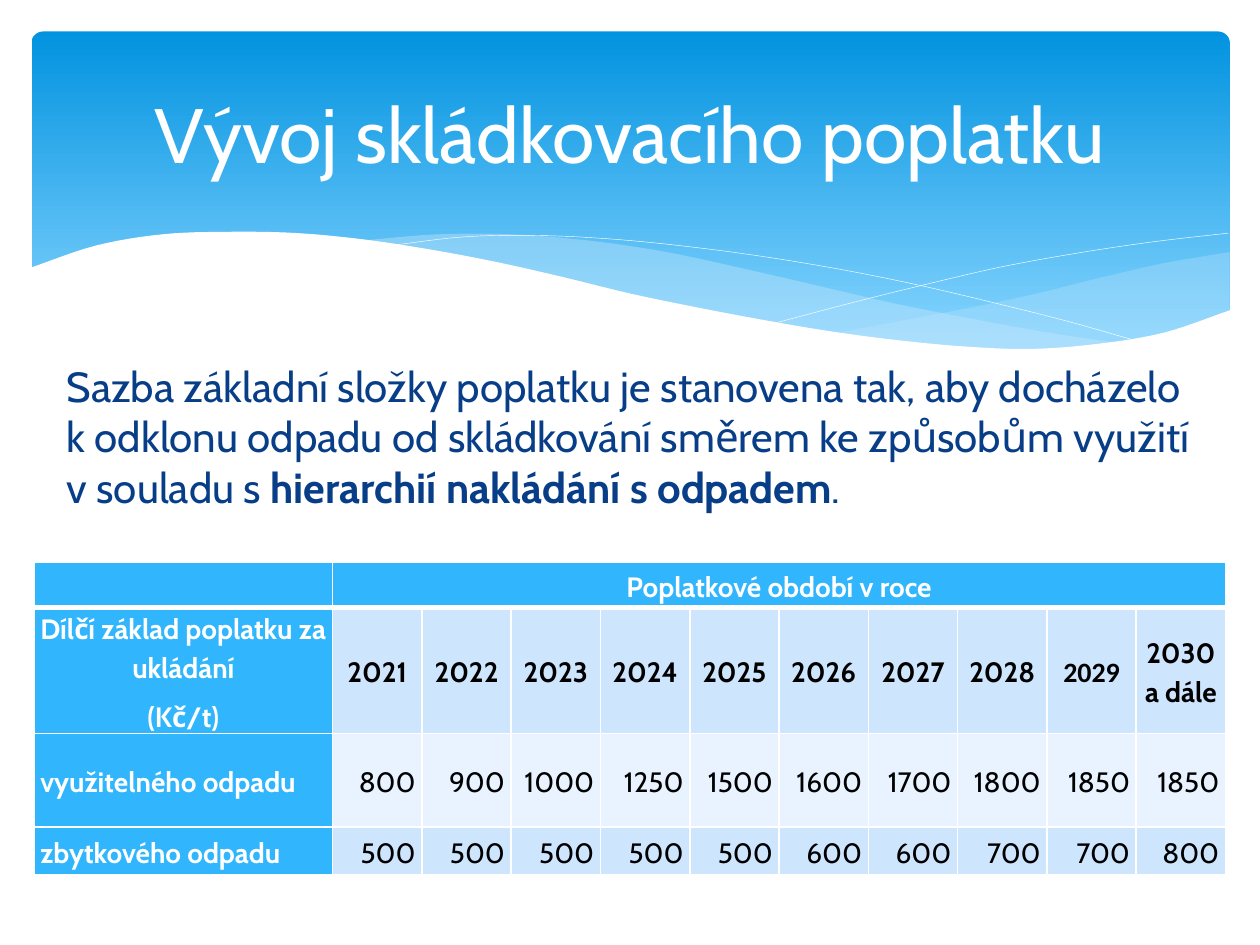
from lxml import etree
from pptx import Presentation
from pptx.dml.color import RGBColor
from pptx.enum.shapes import MSO_SHAPE
from pptx.enum.text import MSO_ANCHOR, PP_ALIGN
from pptx.oxml.ns import qn
from pptx.util import Inches, Pt

ROUNDED = MSO_SHAPE.ROUNDED_RECTANGLE
TOP, MIDDLE = MSO_ANCHOR.TOP, MSO_ANCHOR.MIDDLE
LEFT, CENTER, RIGHT, JUSTIFY = PP_ALIGN.LEFT, PP_ALIGN.CENTER, PP_ALIGN.RIGHT, PP_ALIGN.JUSTIFY

WHITE, BLACK, NAVY = "FFFFFF", "000000", "073E87"
BLUE, BAND, PALE, MIST = "31B6FD", "CEE5FE", "E8F3FF", "C6E7FC"
FONT, YEAR_FONT = "Cabin", {"2029": "Calibri"}

TITLE = "Vývoj skládkovacího poplatku"
BODY = [
    ("Sazba základní složky poplatku je stanovena tak, aby docházelo k odklonu odpadu "
     "od skládkování směrem ke způsobům využití v souladu s ", False),
    ("hierarchií nakládání s odpadem", True),
    (".", False),
]
PERIOD = "Poplatkové období v roce"
YEARS_LABEL = "Dílčí základ poplatku za ukládání\n(Kč/t)"
YEARS = [str(year) for year in range(2021, 2030)] + ["2030 a dále"]
FEES = [
    ("využitelného odpadu", [800, 900, 1000, 1250, 1500, 1600, 1700, 1800, 1850, 1850], PALE),
    ("zbytkového odpadu", [500, 500, 500, 500, 500, 600, 600, 700, 700, 800], BAND),
]
ROW_HEIGHTS = [0.36, 0.88, 0.74, 0.38]
LABEL_WIDTH, TABLE_WIDTH = 2.37, 9.46

BANDS = [
    {"span": (6.61, 9.76), "color": MIST, "opacity": 29,
     "upper": [2.65, 2.55, 2.45, 2.34, 2.21, 2.09, 2],
     "lower": [2.65, 2.71, 2.76, 2.78, 2.74, 2.65, 2.47]},
    {"span": (2.86, 8.93), "color": MIST, "opacity": 40,
     "upper": [1.91, 1.86, 1.86, 1.91, 2, 2.13, 2.27, 2.41, 2.53, 2.64, 2.73],
     "lower": [1.91, 2, 2.12, 2.26, 2.4, 2.53, 2.64, 2.72, 2.77, 2.78, 2.73]},
]
HAIRLINES = [
    {"span": (3.09, 9.07),
     "heights": [1.95, 1.88, 1.87, 1.9, 1.96, 2.04, 2.14, 2.26, 2.4, 2.55, 2.72]},
    {"span": (6.13, 9.75), "heights": [2.57, 2.41, 2.26, 2.12, 2.01, 1.92, 1.85]},
]
FOREGROUND = {
    "span": (0.23, 9.77), "color": WHITE, "opacity": 100,
    "upper": [2.13, 1.95, 1.86, 1.84, 1.85, 1.9, 1.98, 2.08, 2.2, 2.33,
              2.44, 2.54, 2.63, 2.7, 2.75, 2.77, 2.73, 2.64, 2.46],
    "lower": [3.29, 3.29],
}
STEPS_PER_KNOT = 6


def rgb(value):
    return RGBColor.from_string(value)


def style(font, size, color, bold=False, name=FONT):
    font.name, font.size, font.bold = name, Pt(size), bold
    font.color.rgb = rgb(color)


def catmull_rom(a, b, c, d, t):
    return b + t / 2 * (c - a + t * (2 * a - 5 * b + 4 * c - d + t * (3 * (b - c) + d - a)))


def smooth_curve(span, heights):
    start, end = span
    knots = len(heights) - 1
    padded = [2 * heights[0] - heights[1], *heights, 2 * heights[-1] - heights[-2]]
    points = []
    for step in range(knots * STEPS_PER_KNOT + 1):
        knot = min(step // STEPS_PER_KNOT, knots - 1)
        t = step / STEPS_PER_KNOT - knot
        x = start + (end - start) * (knot + t) / knots
        points.append((Inches(x), Inches(catmull_rom(*padded[knot:knot + 4], t))))
    return points


def add_freeform(slide, points, close):
    builder = slide.shapes.build_freeform(*points[0])
    builder.add_line_segments(points[1:], close=close)
    sp = builder.convert_to_shape()
    sp.shadow.inherit = False
    return sp


def add_band(slide, span, upper, lower, color, opacity):
    outline = smooth_curve(span, upper) + smooth_curve(span, lower)[::-1]
    sp = add_freeform(slide, outline, True)
    sp.line.fill.background()
    sp.fill.solid()
    sp.fill.fore_color.rgb = rgb(color)
    if opacity < 100:
        clr = sp.fill._xPr.find(".//" + qn("a:srgbClr"))
        etree.SubElement(clr, qn("a:alpha"), val=str(opacity * 1000))


def add_hairline(slide, span, heights):
    sp = add_freeform(slide, smooth_curve(span, heights), False)
    sp.fill.background()
    sp.line.color.rgb = rgb(WHITE)
    sp.line.width = Pt(0.25)


def add_banner(slide):
    sp = slide.shapes.add_shape(ROUNDED, Inches(0.25), Inches(0.25), Inches(9.51), Inches(2.7))
    sp.shadow.inherit = False
    sp.adjustments[0] = 0.034
    sp.line.fill.background()
    sp.fill.gradient()
    sp.fill.gradient_angle = 270
    stops = [(0, "0293E0"), (0.9, "83D3FE")]
    for stop, (position, color) in zip(sp.fill.gradient_stops, stops):
        stop.position = position
        stop.color.rgb = rgb(color)
    for band in BANDS:
        add_band(slide, **band)
    for hairline in HAIRLINES:
        add_hairline(slide, **hairline)
    add_band(slide, **FOREGROUND)


def add_text(slide, box, anchor, align):
    tf = slide.shapes.add_textbox(*map(Inches, box)).text_frame
    tf.word_wrap = True
    tf.vertical_anchor = anchor
    p = tf.paragraphs[0]
    p.alignment = align
    return p


def set_borders(cell, bottom):
    tc_pr = cell._tc.get_or_add_tcPr()
    for side, width in (("L", 1), ("R", 1), ("T", 1), ("B", bottom)):
        ln = etree.SubElement(tc_pr, qn("a:ln" + side), w=str(Pt(width)))
        solid = etree.SubElement(ln, qn("a:solidFill"))
        etree.SubElement(solid, qn("a:srgbClr"), val=WHITE)


def fill_cell(cell, text, fill, align, color, bold, bottom=1, name=FONT):
    cell.margin_left = cell.margin_right = Inches(0.05)
    cell.margin_top = cell.margin_bottom = 0
    cell.vertical_anchor = MIDDLE
    set_borders(cell, bottom)
    cell.fill.solid()
    cell.fill.fore_color.rgb = rgb(fill)
    cell.text = text
    for p in cell.text_frame.paragraphs:
        p.alignment = align
        p.line_spacing = 1.15
        p.space_before = Pt(6)
        style(p.font, 16, color, bold, name)


def add_fee_table(slide):
    count = len(YEARS)
    table = slide.shapes.add_table(
        len(ROW_HEIGHTS), count + 1, Inches(0.27), Inches(4.46),
        Inches(TABLE_WIDTH), Inches(sum(ROW_HEIGHTS))).table
    table.first_row = table.horz_banding = False
    widths = [LABEL_WIDTH] + [(TABLE_WIDTH - LABEL_WIDTH) / count] * count
    for column, width in zip(table.columns, widths):
        column.width = Inches(width)
    for row, height in zip(table.rows, ROW_HEIGHTS):
        row.height = Inches(height)

    table.cell(0, 1).merge(table.cell(0, count))
    for c in range(count + 1):
        fill_cell(table.cell(0, c), PERIOD if c == 1 else "", BLUE, CENTER, WHITE, True, bottom=3)

    fill_cell(table.cell(1, 0), YEARS_LABEL, BLUE, CENTER, WHITE, True)
    for c, year in enumerate(YEARS, 1):
        fill_cell(table.cell(1, c), year, BAND, CENTER, BLACK, True, name=YEAR_FONT.get(year, FONT))

    for r, (label, fees, fill) in enumerate(FEES, 2):
        fill_cell(table.cell(r, 0), label, BLUE, JUSTIFY, WHITE, True)
        for c, fee in enumerate(fees, 1):
            fill_cell(table.cell(r, c), str(fee), fill, RIGHT, BLACK, False)


def main():
    prs = Presentation()
    prs.slide_width, prs.slide_height = Inches(10), Inches(7.5)
    s = prs.slides.add_slide(prs.slide_layouts[6])
    add_banner(s)
    p = add_text(s, (0.43, 2.81, 9.13, 3.69), TOP, LEFT)
    p.space_before = Pt(4.8)
    for text, bold in BODY:
        r = p.add_run()
        r.text = text
        style(r.font, 24, NAVY, bold)
    p = add_text(s, (0.5, 0.37, 9, 1.37), MIDDLE, CENTER)
    p.text = TITLE
    style(p.font, 44, WHITE)
    add_fee_table(s)
    prs.save("out.pptx")


if __name__ == "__main__":
    main()
